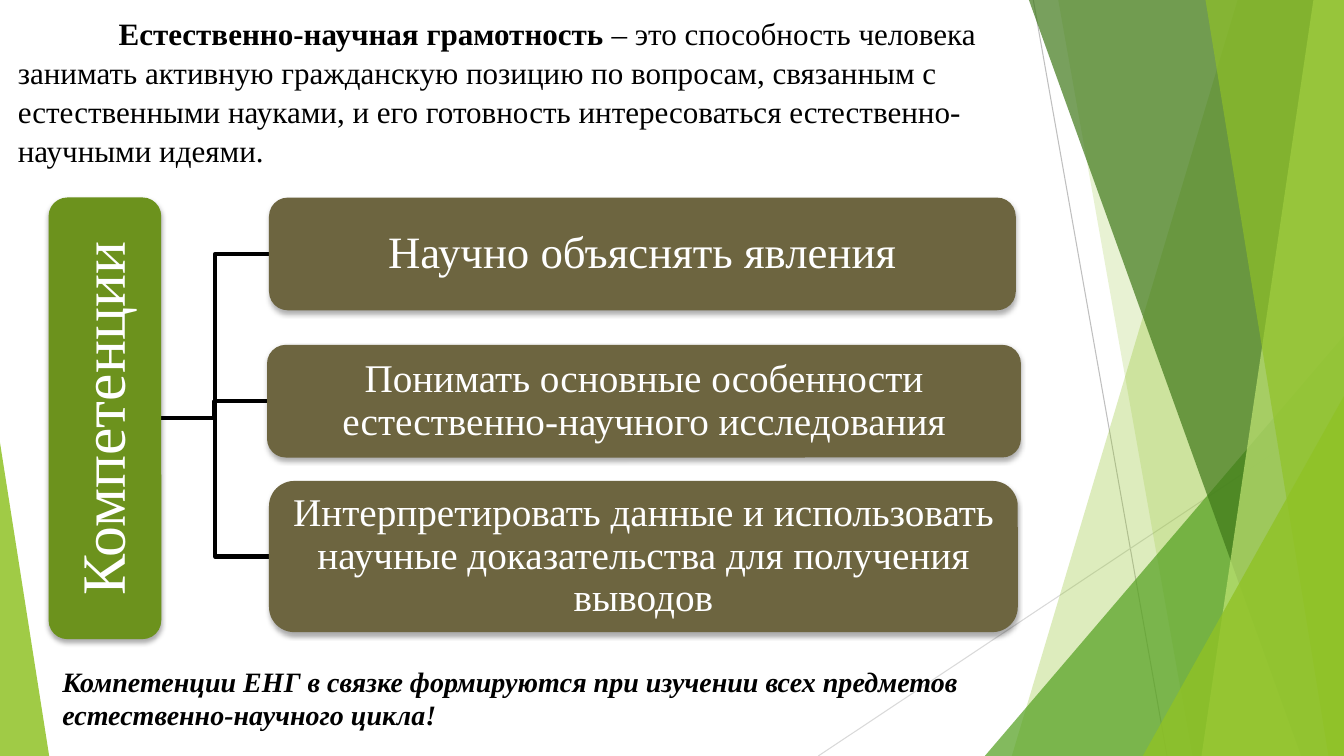
"""Build a slide on scientific literacy and its three competencies."""
from dataclasses import dataclass

import pptx
import pptx.dml.color
import pptx.enum.shapes
import pptx.enum.text
import pptx.oxml
import pptx.oxml.ns
import pptx.util

Cm = pptx.util.Cm
Pt = pptx.util.Pt
Shapes = pptx.enum.shapes.MSO_SHAPE
Align = pptx.enum.text.PP_ALIGN
WIDTH, HEIGHT = 33.87, 19.05
FONT = "Times New Roman"
BROWN = "6D6540"


@dataclass
class Ray:
    top_x: float
    bottom_x: float
    color: str
    opacity: int


@dataclass
class Corner:
    left: float
    top: float
    width: float
    apex: float
    color: str
    opacity: int


@dataclass
class Card:
    left: float
    top: float
    width: float
    height: float
    text: str
    size: float
    color: str = BROWN
    rotation: float = 0


DECOR = [
    Ray(31.19, 25.5, "90C226", 30),
    Ray(26.67, 30.05, "90C226", 20),
    Corner(24.82, 8.46, 9.05, 1, "54A021", 72),
    Ray(25.93, 32.79, "3F7819", 70),
    Ray(33.1, 30.28, "C0E474", 70),
    Ray(30.38, 33.48, "90C226", 65),
    Corner(28.8, 9.98, 5.07, 1, "90C226", 80),
    Corner(0, 11.15, 1.24, 0, "90C226", 85),
]
ROOT = Card(-2.92, 9.12, 11.13, 2.84, "Компетенции", 44, "6C921D", 270)
CARDS = [
    Card(6.78, 4.98, 18.82, 2.84, "Научно объяснять явления", 32),
    Card(6.73, 8.69, 19, 2.84,
         "Понимать основные особенности естественно-научного исследования", 28),
    Card(6.78, 12.12, 18.87, 3.81,
         "Интерпретировать данные и использовать научные доказательства "
         "для получения выводов", 28),
]


def rgb(color: str) -> pptx.dml.color.RGBColor:
    return pptx.dml.color.RGBColor.from_string(color)


def paint(shape, color: str, opacity: int = 100) -> None:
    shape.shadow.inherit = False
    shape.line.fill.background()
    shape.fill.solid()
    shape.fill.fore_color.rgb = rgb(color)
    if opacity < 100:
        tone = shape.element.spPr.find(".//" + pptx.oxml.ns.qn("a:srgbClr"))
        alpha = pptx.oxml.parse_xml(
            f'<a:alpha {pptx.oxml.ns.nsdecls("a")} val="{opacity * 1000}"/>')
        tone.append(alpha)


def cast_shadow(shape) -> None:
    effects = shape.element.spPr.find(pptx.oxml.ns.qn("a:effectLst"))
    effects.append(pptx.oxml.parse_xml(
        f'<a:outerShdw {pptx.oxml.ns.nsdecls("a")} blurRad="{Pt(3.5)}" '
        f'dist="{Pt(2.2)}" dir="5400000" rotWithShape="0">'
        '<a:srgbClr val="000000"><a:alpha val="32000"/></a:srgbClr>'
        '</a:outerShdw>'))


def outline(page, points: list[tuple[float, float]], close: bool):
    start, *rest = [(Cm(x), Cm(y)) for x, y in points]
    builder = page.shapes.build_freeform(*start)
    builder.add_line_segments(rest, close=close)
    return builder.convert_to_shape()


def add_span(para, text: str, *, size: float, color: str = "000000",
             bold: bool = False, italic: bool = False) -> None:
    span = para.add_run()
    span.text = text
    span.font.name = FONT
    span.font.size = Pt(size)
    span.font.bold = bold
    span.font.italic = italic
    span.font.color.rgb = rgb(color)


def add_box(page, left: float, top: float, width: float, height: float):
    box = page.shapes.add_textbox(Cm(left), Cm(top), Cm(width), Cm(height))
    box.text_frame.word_wrap = True
    return box.text_frame.paragraphs[0]


def draw_line(page, start: tuple[float, float], end: tuple[float, float],
              color: str) -> None:
    line = page.shapes.add_connector(
        pptx.enum.shapes.MSO_CONNECTOR.STRAIGHT, *map(Cm, start + end))
    line.line.color.rgb = rgb(color)
    line.line.width = Pt(0.75)
    line.element.spPr.append(pptx.oxml.parse_xml(
        f'<a:effectLst {pptx.oxml.ns.nsdecls("a")}/>'))


def draw_ray(page, ray: Ray) -> None:
    shape = outline(page, [(ray.top_x, 0), (WIDTH, 0), (WIDTH, HEIGHT),
                           (ray.bottom_x, HEIGHT)], True)
    paint(shape, ray.color, ray.opacity)


def draw_corner(page, corner: Corner) -> None:
    shape = page.shapes.add_shape(
        Shapes.ISOSCELES_TRIANGLE, Cm(corner.left), Cm(corner.top),
        Cm(corner.width), Cm(HEIGHT - corner.top))
    shape.adjustments[0] = corner.apex
    paint(shape, corner.color, corner.opacity)


def draw_branch(page, card: Card) -> None:
    start_x = ROOT.left + (ROOT.width + ROOT.height) / 2
    start_y = ROOT.top + ROOT.height / 2
    end_y = card.top + card.height / 2
    bend_x = (start_x + card.left) / 2
    branch = outline(page, [(start_x, start_y), (bend_x, start_y),
                            (bend_x, end_y), (card.left, end_y)], False)
    branch.shadow.inherit = False
    branch.fill.background()
    branch.line.color.rgb = rgb("000000")
    branch.line.width = Pt(3)


def draw_card(page, card: Card) -> None:
    shape = page.shapes.add_shape(
        Shapes.ROUNDED_RECTANGLE, Cm(card.left), Cm(card.top),
        Cm(card.width), Cm(card.height))
    shape.rotation = card.rotation
    paint(shape, card.color)
    cast_shadow(shape)
    frame = shape.text_frame
    frame.word_wrap = True
    frame.vertical_anchor = pptx.enum.text.MSO_ANCHOR.MIDDLE
    frame.margin_left = frame.margin_right = Cm(0.05)
    frame.margin_top = frame.margin_bottom = Cm(0.05)
    para = frame.paragraphs[0]
    para.alignment = Align.CENTER
    para.line_spacing = 0.9
    add_span(para, card.text, size=card.size, color="FFFFFF")


def main() -> None:
    deck = pptx.Presentation()
    deck.slide_width, deck.slide_height = Cm(WIDTH), Cm(HEIGHT)
    page = deck.slides.add_slide(deck.slide_layouts[6])
    draw_line(page, (26.04, 0), (29.41, HEIGHT), "BFBFBF")
    draw_line(page, (WIDTH, 10.24), (20.62, HEIGHT), "D9D9D9")
    for piece in DECOR:
        if isinstance(piece, Ray):
            draw_ray(page, piece)
        else:
            draw_corner(page, piece)
    intro = add_box(page, -0.03, 0.18, 26.8, 4.17)
    intro.line_spacing = 1.05
    indent = intro._p.get_or_add_pPr()
    indent.set("marL", str(Cm(0.23)))
    indent.set("indent", str(Cm(2.54)))
    add_span(intro, "Естественно-научная грамотность ", size=22.2, bold=True)
    add_span(intro, "– это способность человека занимать активную гражданскую "
             "позицию по вопросам, связанным с естественными науками, и его "
             "готовность интересоваться естественно-научными идеями.", size=22.2)
    for card in reversed(CARDS):
        draw_branch(page, card)
    for card in [ROOT, *CARDS]:
        draw_card(page, card)
    closing = add_box(page, 1.32, 16.61, 25.43, 2.74)
    add_span(closing, "Компетенции ЕНГ в связке формируются при изучении всех "
             "предметов естественно-научного цикла!", size=20, bold=True, italic=True)
    deck.save("out.pptx")


if __name__ == "__main__":
    main()
